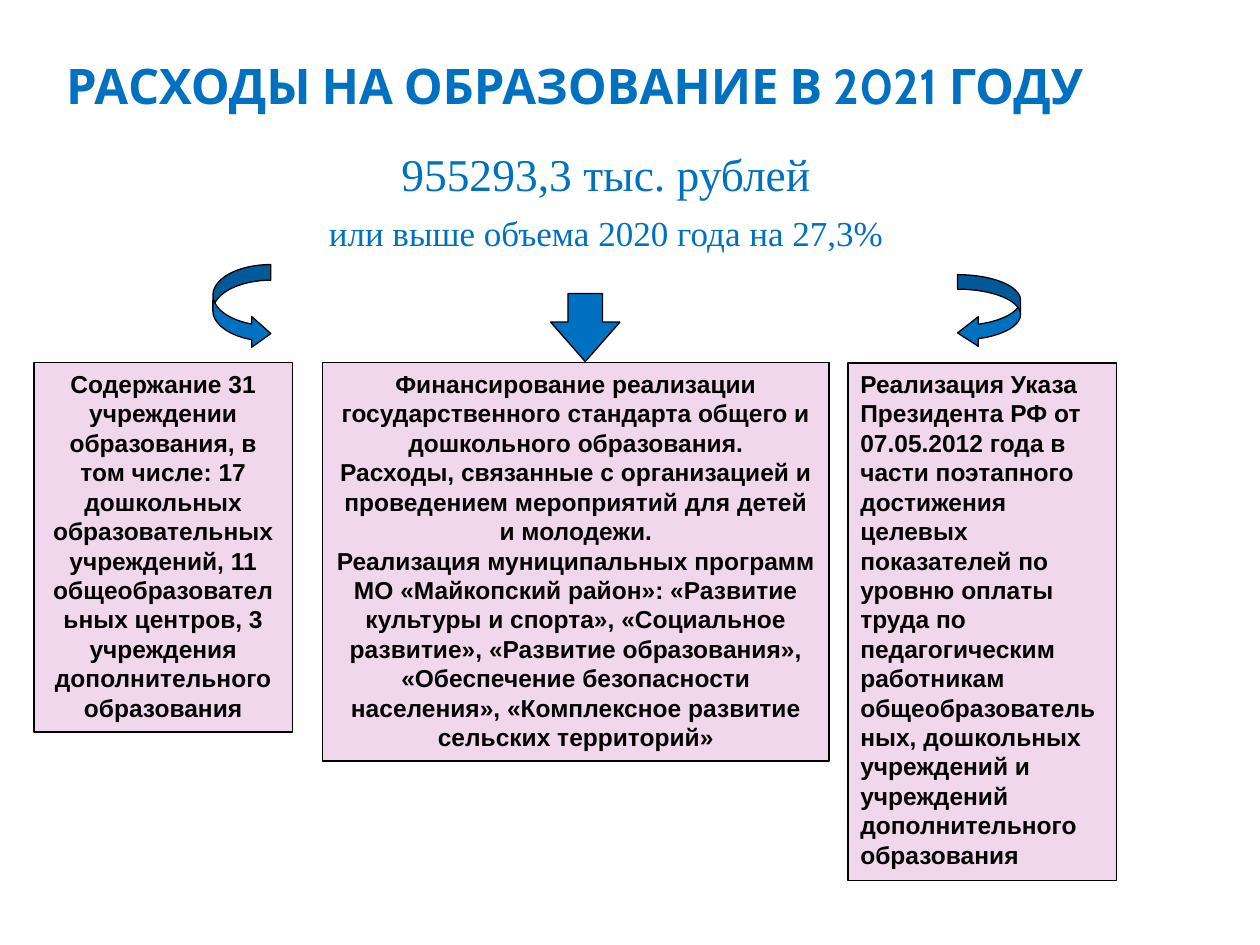
from dataclasses import dataclass

from lxml import etree
from pptx import Presentation
from pptx.dml.color import RGBColor
from pptx.enum import shapes, text
from pptx.oxml import ns
from pptx.util import Inches, Pt

BLUE = RGBColor(0x00, 0x70, 0xC0)
PINK = RGBColor(0xF1, 0xD7, 0xEC)
BLACK = RGBColor(0, 0, 0)
CENTER, LEFT = text.PP_ALIGN.CENTER, text.PP_ALIGN.LEFT
BOX_TOP = 2.88


@dataclass
class Box:
    left: float
    width: float
    height: float
    align: text.PP_ALIGN
    paragraphs: list[str]


@dataclass
class Arrow:
    kind: shapes.MSO_SHAPE
    left: float
    top: float
    width: float
    height: float
    adjustments: list[float]


BOXES = [
    Box(0.27, 2.05, 2.93, CENTER, [
        "Содержание 31 учреждении образования, в том числе: 17 дошкольных "
        "образовательных учреждений, 11 общеобразовательных центров, "
        "3 учреждения дополнительного образования"]),
    Box(2.56, 4.02, 3.16, CENTER, [
        "Финансирование реализации государственного стандарта общего "
        "и дошкольного образования.",
        "Расходы, связанные с организацией и проведением мероприятий "
        "для детей и молодежи.",
        "Реализация муниципальных программ МО «Майкопский район»: "
        "«Развитие культуры и спорта», «Социальное развитие», "
        "«Развитие образования», «Обеспечение безопасности населения», "
        "«Комплексное развитие сельских территорий»"]),
    Box(6.73, 2.13, 4.11, LEFT, [
        "Реализация Указа Президента РФ от 07.05.2012 года в части "
        "поэтапного достижения целевых показателей по уровню оплаты труда "
        "по педагогическим работникам общеобразовательных, дошкольных "
        "учреждений и учреждений дополнительного образования"]),
]

ARROWS = [
    Arrow(shapes.MSO_SHAPE.CURVED_RIGHT_ARROW, 1.69, 2.1, 0.46, 0.67, [0.27, 0.53, 0.33]),
    Arrow(shapes.MSO_SHAPE.CURVED_LEFT_ARROW, 7.6, 2.18, 0.5, 0.58, [0.23, 0.47, 0.33]),
    Arrow(shapes.MSO_SHAPE.DOWN_ARROW, 4.37, 2.33, 0.55, 0.54, [0.5, 0.58]),
]


def place(sp, left: float, top: float, width: float, height: float) -> None:
    sp.left, sp.top = Inches(left), Inches(top)
    sp.width, sp.height = Inches(width), Inches(height)


def add_run(p, words: str, font: str, size: float, color: RGBColor, bold: bool) -> None:
    r = p.add_run()
    r.text = words
    r.font.name, r.font.size, r.font.bold = font, Pt(size), bold
    r.font.color.rgb = color


def add_outlined(s, kind: shapes.MSO_SHAPE, left: float, top: float,
                 width: float, height: float, fill: RGBColor):
    sp = s.shapes.add_shape(kind, Inches(left), Inches(top), Inches(width), Inches(height))
    sp.shadow.inherit = False
    sp.fill.solid()
    sp.fill.fore_color.rgb = fill
    sp.line.color.rgb = BLACK
    sp.line.width = Pt(0.75)
    return sp


def add_box(s, box: Box) -> None:
    sp = add_outlined(s, shapes.MSO_SHAPE.RECTANGLE, box.left, BOX_TOP,
                      box.width, box.height, PINK)
    tf = sp.text_frame
    tf.word_wrap = True
    tf.auto_size = text.MSO_AUTO_SIZE.SHAPE_TO_FIT_TEXT
    tf.vertical_anchor = text.MSO_ANCHOR.TOP
    for i, words in enumerate(box.paragraphs):
        p = tf.add_paragraph() if i else tf.paragraphs[0]
        p.alignment = box.align
        add_run(p, words, "Arial", 14, BLACK, True)


def add_arrow(s, arrow: Arrow) -> None:
    sp = add_outlined(s, arrow.kind, arrow.left, arrow.top, arrow.width, arrow.height, BLUE)
    for i, value in enumerate(arrow.adjustments):
        sp.adjustments[i] = value


def fill_title(sp) -> None:
    place(sp, 0.27, 0.36, 8.58, 1.02)
    tf = sp.text_frame
    tf.auto_size = text.MSO_AUTO_SIZE.NONE
    tf.vertical_anchor = text.MSO_ANCHOR.TOP
    tf.margin_left = tf.margin_right = Inches(0.05)
    tf.margin_top, tf.margin_bottom = Inches(0.08), 0
    p = tf.paragraphs[0]
    p.alignment = CENTER
    add_run(p, "РАСХОДЫ НА ОБРАЗОВАНИЕ В 2021 ГОДУ", "Cabin", 28, BLUE, True)


def fill_body(sp) -> None:
    place(sp, 0.12, 1.07, 9.38, 6.22)
    tf = sp.text_frame
    tf.auto_size = text.MSO_AUTO_SIZE.NONE
    tf.margin_top = Inches(0.09)
    lines = [("955293,3 тыс. рублей", 26), ("или выше объема 2020 года на 27,3%", 20)]
    for i, (words, size) in enumerate(lines):
        p = tf.add_paragraph() if i else tf.paragraphs[0]
        p.alignment = CENTER
        p.space_before = Pt(6 if i else 0)
        # No bullet and no hanging indent
        pPr = p._p.get_or_add_pPr()
        pPr.set("marL", "0")
        pPr.set("indent", "0")
        etree.SubElement(pPr, ns.qn("a:buNone"))
        add_run(p, words, "Times New Roman", size, BLUE, False)


def main() -> None:
    prs = Presentation()
    prs.slide_width, prs.slide_height = Inches(10), Inches(7.5)
    s = prs.slides.add_slide(prs.slide_layouts[1])

    # Heading and total
    fill_title(s.shapes.title)
    fill_body(s.placeholders[1])

    # Spending areas and the arrows leading to them
    for box in BOXES:
        add_box(s, box)
    for arrow in ARROWS:
        add_arrow(s, arrow)

    prs.save("out.pptx")


if __name__ == "__main__":
    main()
